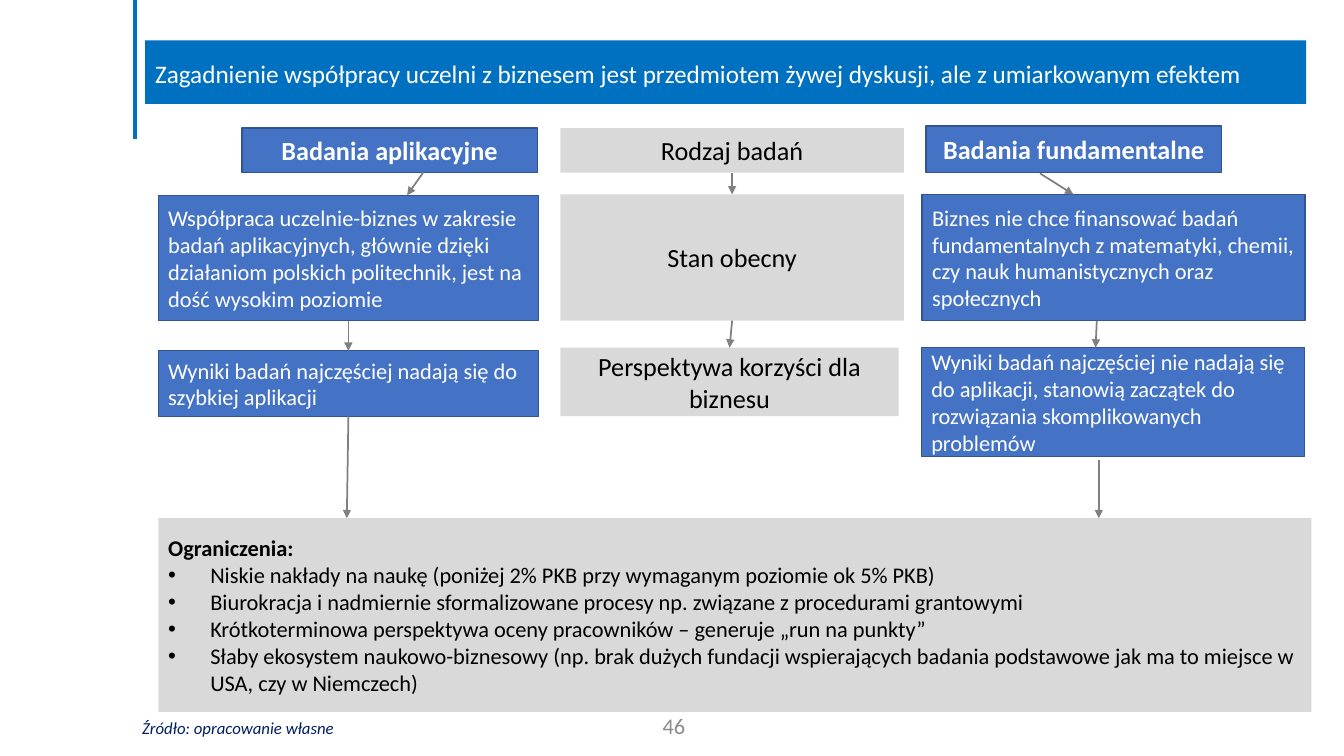
from dataclasses import dataclass
from typing import Optional

from lxml.etree import SubElement
from pptx import Presentation
from pptx.dml.color import RGBColor
from pptx.enum.shapes import MSO_CONNECTOR as Connector, MSO_SHAPE as Preset
from pptx.enum.text import MSO_ANCHOR as Anchor, MSO_AUTO_SIZE as AutoSize, PP_ALIGN as Align
from pptx.oxml.ns import qn
from pptx.util import Cm, Pt

COLORS = {
    "box": "4472C4", "border": "325491", "grey": "D9D9D9", "title": "0070C0",
    "arrow": "808080", "white": "FFFFFF", "black": "000000",
    "source": "002060", "number": "8C8C8C",
}
FONT = "Calibri"
TOP, BOTTOM = 0, 2

LEFT_X, LEFT_WIDTH = 3.99, 9.58
MIDDLE_X, MIDDLE_WIDTH = 14.12, 8.66
RIGHT_WIDTH = 9.65
HEAD_WIDTH, HEAD_SIZE = 7.44, 18.7


@dataclass(frozen=True)
class Box:
    name: str
    left: float
    top: float
    width: float
    height: float
    text: str
    fill: str = "box"
    size: float = 16
    bold: bool = False
    align: Align = Align.LEFT


@dataclass(frozen=True)
class Arrow:
    """An arrow whose ends are points, or boxes met at mid-side."""
    start: Optional[tuple[float, float]] = None
    end: Optional[tuple[float, float]] = None
    start_box: str = ""
    end_box: str = ""


BOXES = [
    Box("fundamental", 23.34, 3.18, HEAD_WIDTH, 1.17, "Badania fundamentalne",
        size=HEAD_SIZE, bold=True, align=Align.CENTER),
    Box("applied", 6.1, 3.23, HEAD_WIDTH, 1.12, "Badania aplikacyjne",
        size=HEAD_SIZE, bold=True, align=Align.CENTER),
    Box("applied state", LEFT_X, 4.93, LEFT_WIDTH, 3.15,
        "Współpraca uczelnie-biznes w zakresie badań aplikacyjnych, głównie dzięki "
        "działaniom polskich politechnik, jest na dość wysokim poziomie"),
    Box("fundamental state", 23.24, 4.9, RIGHT_WIDTH, 3.18,
        "Biznes nie chce finansować badań fundamentalnych z matematyki, chemii, "
        "czy nauk humanistycznych oraz społecznych"),
    Box("kind", MIDDLE_X, 3.23, MIDDLE_WIDTH, 1.12, "Rodzaj badań",
        "grey", HEAD_SIZE, align=Align.CENTER),
    Box("state", MIDDLE_X, 4.9, MIDDLE_WIDTH, 3.18, "Stan obecny",
        "grey", HEAD_SIZE, align=Align.CENTER),
    Box("benefits", MIDDLE_X, 8.76, 8.53, 1.73, "Perspektywa korzyści dla biznesu",
        "grey", HEAD_SIZE, align=Align.CENTER),
    Box("limits", LEFT_X, 13.06, 29.06, 4.88, "Ograniczenia:", "grey", bold=True),
    Box("applied results", LEFT_X, 8.84, LEFT_WIDTH, 1.65,
        "Wyniki badań najczęściej nadają się do szybkiej aplikacji"),
    Box("fundamental results", 23.22, 8.76, RIGHT_WIDTH, 2.74,
        "Wyniki badań najczęściej nie nadają się do aplikacji, stanowią zaczątek "
        "do rozwiązania skomplikowanych problemów"),
]
TITLE = Box("title", 3.66, 1.02, 29.26, 1.6,
            "Zagadnienie współpracy uczelni z biznesem jest przedmiotem żywej dyskusji, "
            "ale z umiarkowanym efektem", "title", 18)
LIMITS = [
    "Niskie nakłady na naukę (poniżej 2% PKB przy wymaganym poziomie ok 5% PKB)",
    "Biurokracja i nadmiernie sformalizowane procesy np. związane z procedurami grantowymi",
    "Krótkoterminowa perspektywa oceny pracowników – generuje „run na punkty”",
    "Słaby ekosystem naukowo-biznesowy (np. brak dużych fundacji wspierających badania "
    "podstawowe jak ma to miejsce w USA, czy w Niemczech)",
]
ARROWS = [
    Arrow(start=(10.67, 4.34), end=(10.26, 4.92)),
    Arrow(start_box="applied state", end_box="applied results"),
    Arrow(start=(27.64, 8.08), end=(27.61, 8.76)),
    Arrow(start_box="kind", end_box="state"),
    Arrow(start_box="state", end_box="benefits"),
    Arrow(start_box="applied results", end=(8.74, 13.06)),
    Arrow(start=(27.69, 11.58), end=(27.69, 13.06)),
    Arrow(start=(26.21, 4.37), end=(27.05, 4.9)),
]


def rgb(name: str) -> RGBColor:
    return RGBColor.from_string(COLORS[name])


def write(paragraph, text: str, *, size: float = 16, color: str = "black",
          bold: bool = False, italic: bool = False, align: Align = Align.LEFT) -> None:
    paragraph.alignment = align
    run = paragraph.add_run()
    run.text = text
    font = run.font
    font.name, font.size, font.bold, font.italic = FONT, Pt(size), bold, italic
    font.color.rgb = rgb(color)


def add_bullet(paragraph) -> None:
    properties = paragraph._p.get_or_add_pPr()
    properties.set("marL", str(Cm(1.06)))
    properties.set("indent", str(-Cm(1.06)))
    SubElement(properties, qn("a:buFont")).set("typeface", "Arial")
    SubElement(properties, qn("a:buChar")).set("char", "•")


def add_box(slide, box: Box):
    shape = slide.shapes.add_shape(
        Preset.RECTANGLE, Cm(box.left), Cm(box.top), Cm(box.width), Cm(box.height))
    shape.shadow.inherit = False
    shape.fill.solid()
    shape.fill.fore_color.rgb = rgb(box.fill)
    if box.fill == "box":
        shape.line.color.rgb = rgb("border")
        shape.line.width = Pt(1)
    else:
        shape.line.fill.background()
    frame = shape.text_frame
    frame.word_wrap = True
    frame.vertical_anchor = Anchor.MIDDLE
    write(frame.paragraphs[0], box.text, size=box.size, bold=box.bold, align=box.align,
          color="black" if box.fill == "grey" else "white")
    return shape


def add_label(slide, left: float, top: float, width: float, height: float,
              text: str, **text_format):
    shape = slide.shapes.add_textbox(Cm(left), Cm(top), Cm(width), Cm(height))
    shape.text_frame.word_wrap = True
    write(shape.text_frame.paragraphs[0], text, **text_format)
    return shape.text_frame


def add_line(slide, start: tuple[float, float], end: tuple[float, float],
             color: str, width: float):
    line = slide.shapes.add_connector(
        Connector.STRAIGHT, *(Cm(value) for value in (*start, *end)))
    line.line.color.rgb = rgb(color)
    line.line.width = Pt(width)
    SubElement(line._element.spPr, qn("a:effectLst"))
    return line


def add_arrow(slide, arrow: Arrow, shapes: dict) -> None:
    line = add_line(slide, arrow.start or (0, 0), arrow.end or (0, 0), "arrow", 1.25)
    SubElement(line.line._get_or_add_ln(), qn("a:tailEnd")).set("type", "triangle")
    if arrow.start_box:
        line.begin_connect(shapes[arrow.start_box], BOTTOM)
    if arrow.end_box:
        line.end_connect(shapes[arrow.end_box], TOP)


def main() -> None:
    presentation = Presentation()
    presentation.slide_width, presentation.slide_height = Cm(33.87), Cm(19.05)
    slide = presentation.slides.add_slide(presentation.slide_layouts[6])

    number = add_label(slide, 16.1, 17.78, 1.5, 1.02, "46",
                       color="number", align=Align.RIGHT)
    number.vertical_anchor = Anchor.MIDDLE
    number.margin_left = number.margin_right = Cm(0.33)
    number.margin_top = number.margin_bottom = Cm(0.18)
    source = add_label(slide, 3.33, 17.96, 13.87, 0.76, "Źródło: opracowanie własne",
                       size=12, color="source", italic=True)
    source.auto_size = AutoSize.SHAPE_TO_FIT_TEXT

    shapes = {box.name: add_box(slide, box) for box in BOXES}
    for limit in LIMITS:
        paragraph = shapes["limits"].text_frame.add_paragraph()
        write(paragraph, limit)
        add_bullet(paragraph)
    for arrow in ARROWS:
        add_arrow(slide, arrow, shapes)

    title = add_box(slide, TITLE).text_frame.paragraphs[0]
    title.line_spacing = 1.07
    title.space_after = Pt(8)
    add_line(slide, (3.4, 0), (3.4, 3.5), "title", 3)
    presentation.save("out.pptx")


if __name__ == "__main__":
    main()
